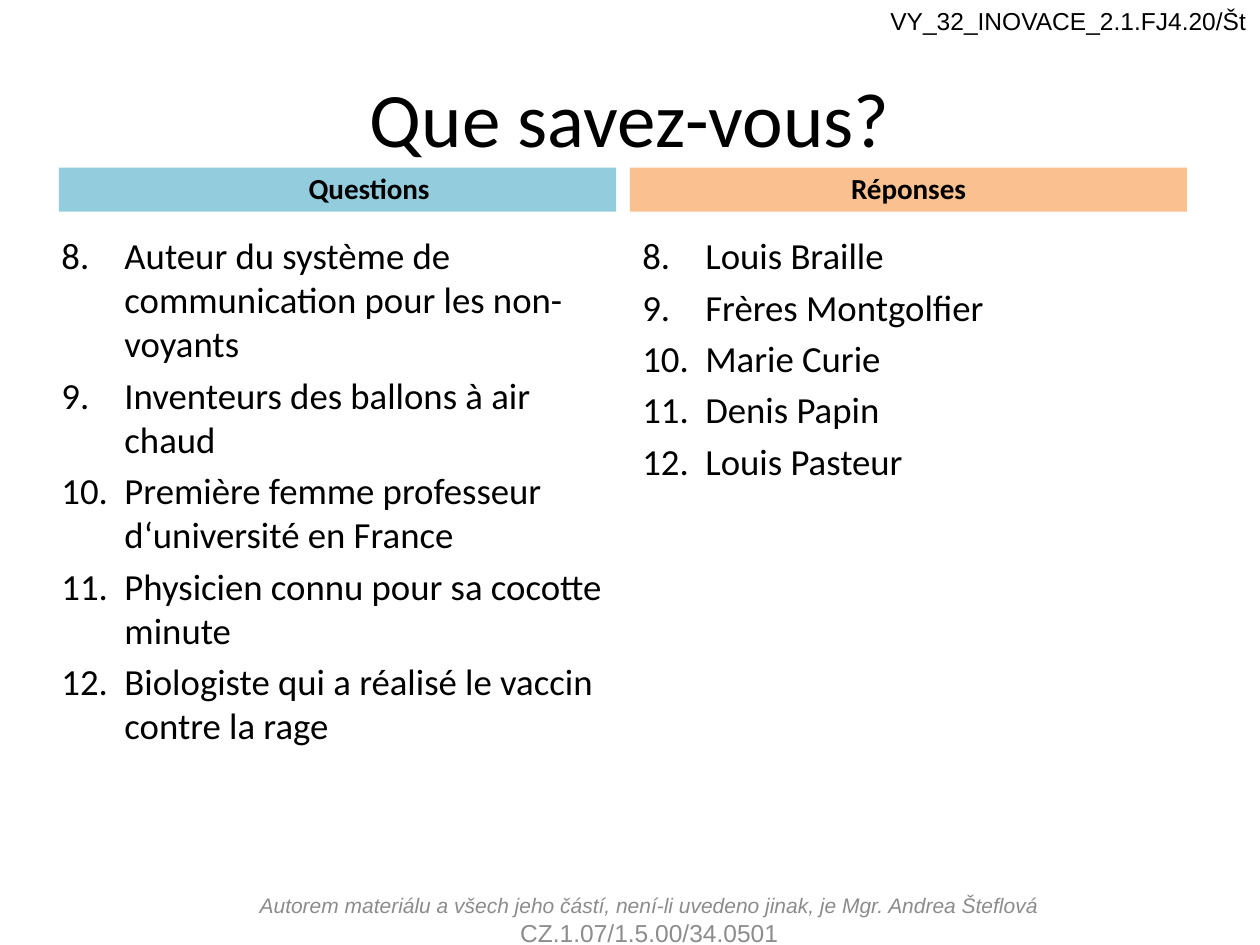
from lxml import etree
from pptx import Presentation
from pptx import util as u
from pptx.dml import color
from pptx.enum import shapes, text
from pptx.oxml import ns

COLORS = {
    "black": "000000",
    "grey": "8C8C8C",
    "blue": "93CDDD",
    "orange": "FAC090",
}
FIRST_NUMBER = 8
QUESTIONS = [
    "Auteur du système de communication pour les non-voyants",
    "Inventeurs des ballons à air chaud",
    "Première femme professeur d‘université en France",
    "Physicien connu pour sa cocotte minute",
    "Biologiste qui a réalisé le vaccin contre la rage",
]
ANSWERS = [
    "Louis Braille",
    "Frères Montgolfier",
    "Marie Curie",
    "Denis Papin",
    "Louis Pasteur",
]


def rgb(name):
    return color.RGBColor.from_string(COLORS[name])


def add_run(paragraph, content, size, font="Calibri", ink="black", bold=False, italic=False):
    run = paragraph.add_run()
    run.text = content
    run.font.name = font
    run.font.size = u.Pt(size)
    run.font.bold = bold
    run.font.italic = italic
    run.font.color.rgb = rgb(ink)


def set_indent(paragraph, left, first):
    properties = paragraph._p.get_or_add_pPr()
    properties.set("marL", str(u.Cm(left)))
    properties.set("indent", str(u.Cm(first)))
    return properties


def add_text_box(slide, left, top, width, height, anchor=text.MSO_ANCHOR.TOP, wrap=True):
    box = slide.shapes.add_textbox(u.Cm(left), u.Cm(top), u.Cm(width), u.Cm(height))
    frame = box.text_frame
    frame.word_wrap = wrap
    frame.vertical_anchor = anchor
    return frame


def add_title(slide, content):
    frame = add_text_box(slide, 1.27, 0.76, 22.86, 3.18, text.MSO_ANCHOR.MIDDLE)
    paragraph = frame.paragraphs[0]
    paragraph.alignment = text.PP_ALIGN.CENTER
    add_run(paragraph, content, 44)


def add_header(slide, content, left, fill, indent=(0, 0)):
    shape = slide.shapes.add_shape(
        shapes.MSO_SHAPE.RECTANGLE, u.Cm(left), u.Cm(3.38), u.Cm(11.23), u.Cm(0.89))
    shape.shadow.inherit = False
    shape.fill.solid()
    shape.fill.fore_color.rgb = rgb(fill)
    shape.line.fill.background()
    frame = shape.text_frame
    frame.word_wrap = True
    frame.vertical_anchor = text.MSO_ANCHOR.BOTTOM
    paragraph = frame.paragraphs[0]
    paragraph.alignment = text.PP_ALIGN.CENTER
    paragraph.space_before = u.Pt(3.3)
    set_indent(paragraph, *indent)
    add_run(paragraph, content, 16.6, bold=True)


def add_numbered_list(slide, items, left, width):
    frame = add_text_box(slide, left, 4.57, width, 13.28)
    for index, item in enumerate(items):
        paragraph = frame.add_paragraph() if index else frame.paragraphs[0]
        paragraph.space_before = u.Pt(4.2)
        properties = set_indent(paragraph, 1.27, -1.27)
        etree.SubElement(properties, ns.qn("a:buFont"), typeface="+mj-lt")
        etree.SubElement(properties, ns.qn("a:buAutoNum"),
                         type="arabicPeriod", startAt=str(FIRST_NUMBER))
        add_run(paragraph, item, 21)


def add_footer(slide, author, project):
    frame = add_text_box(slide, 4.95, 18.03, 16.28, 1.02, text.MSO_ANCHOR.MIDDLE)
    lines = [(author, 12, True), (project, 14, False)]
    for index, (content, size, italic) in enumerate(lines):
        paragraph = frame.add_paragraph() if index else frame.paragraphs[0]
        paragraph.alignment = text.PP_ALIGN.CENTER
        add_run(paragraph, content, size, "Arial", "grey", italic=italic)


def add_material_code(slide, content):
    frame = add_text_box(slide, 17.7, 0, 7.7, 0.86, wrap=False)
    frame.auto_size = text.MSO_AUTO_SIZE.SHAPE_TO_FIT_TEXT
    add_run(frame.paragraphs[0], content, 14, "Arial")


def main():
    presentation = Presentation()
    presentation.slide_width = u.Cm(25.4)
    presentation.slide_height = u.Cm(19.05)
    slide = presentation.slides.add_slide(presentation.slide_layouts[6])

    add_title(slide, "Que savez-vous?")
    add_header(slide, "Questions", 1.19, "blue", indent=(2.01, -0.74))
    add_numbered_list(slide, QUESTIONS, 0.99, 11.51)
    add_header(slide, "Réponses", 12.7, "orange")
    add_numbered_list(slide, ANSWERS, 12.7, 11.71)
    add_footer(
        slide,
        "Autorem materiálu a všech jeho částí, není-li uvedeno jinak, je Mgr. Andrea Šteflová",
        "CZ.1.07/1.5.00/34.0501")
    add_material_code(slide, "VY_32_INOVACE_2.1.FJ4.20/Št")

    presentation.save("out.pptx")


if __name__ == "__main__":
    main()
